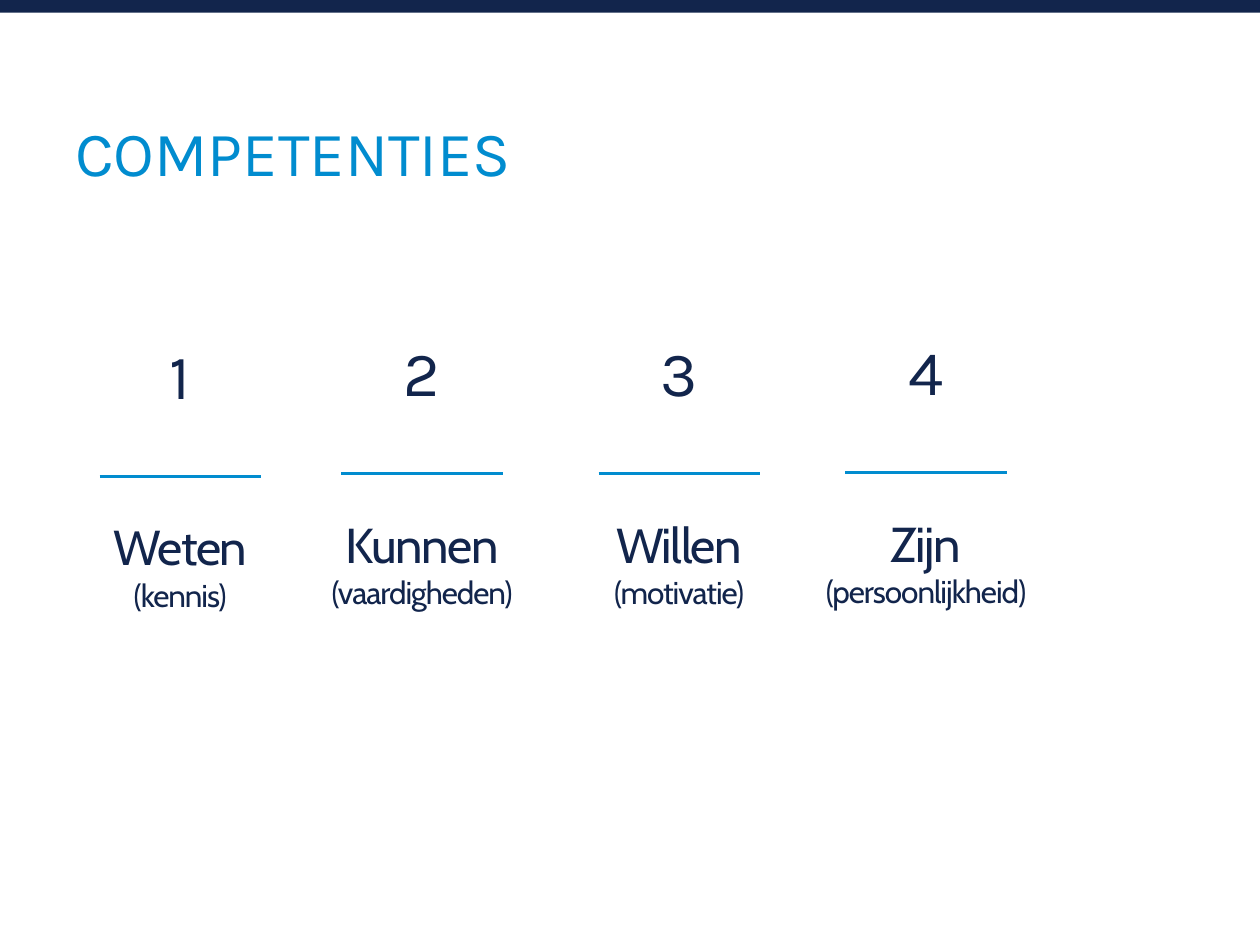
import pptx
import pptx.util
import pptx.dml.color
import pptx.enum.shapes
import pptx.enum.text
import pptx.oxml.ns
from lxml import etree

Inches, Pt = pptx.util.Inches, pptx.util.Pt
RGBColor = pptx.dml.color.RGBColor
Anchor = pptx.enum.text.MSO_ANCHOR
Align = pptx.enum.text.PP_ALIGN
AutoSize = pptx.enum.text.MSO_AUTO_SIZE

NAVY = RGBColor(0x12, 0x25, 0x4C)
BLUE = RGBColor(0x01, 0x8C, 0xCF)

TITLE = {"name": "Karla", "size": Pt(36)}
NUMBER = {"name": "Karla", "size": Pt(36)}
WORD = {"name": "Cabin", "size": Pt(28)}
DETAIL = {"name": "Cabin", "size": Pt(18)}


class Deck:
    def __init__(self, width, height):
        self.prs = pptx.Presentation()
        self.prs.slide_width = Inches(width)
        self.prs.slide_height = Inches(height)
        self.s = self.prs.slides.add_slide(self.prs.slide_layouts[6])

    def bar(self, x, y, w, h, color):
        sp = self.s.shapes.add_shape(
            pptx.enum.shapes.MSO_SHAPE.RECTANGLE,
            Inches(x), Inches(y), Inches(w), Inches(h))
        sp.shadow.inherit = False
        sp.fill.solid()
        sp.fill.fore_color.rgb = color
        sp.line.fill.background()

    def text(self, x, y, w, h, lines, color, frame, paragraph):
        """Each line is (text, font values, letter spacing in points)."""
        sp = self.s.shapes.add_textbox(Inches(x), Inches(y), Inches(w), Inches(h))
        tf = sp.text_frame
        for key, value in {"word_wrap": True, **frame}.items():
            setattr(tf, key, value)
        for i, (text, font, spacing) in enumerate(lines):
            p = tf.add_paragraph() if i else tf.paragraphs[0]
            for key, value in paragraph.items():
                setattr(p, key, value)
            r = p.add_run()
            r.text = text
            for key, value in font.items():
                setattr(r.font, key, value)
            r.font.color.rgb = color
            if spacing:
                r._r.get_or_add_rPr().set("spc", str(round(spacing * 100)))

    def rule(self, x, y, w, color, weight):
        c = self.s.shapes.add_connector(
            pptx.enum.shapes.MSO_CONNECTOR.STRAIGHT,
            Inches(x), Inches(y), Inches(x + w), Inches(y))
        c.line.color.rgb = color
        c.line.width = Pt(weight)
        etree.SubElement(c._element.spPr, pptx.oxml.ns.qn("a:effectLst"))


def main():
    deck = Deck(10, 7.5)

    # Top band and title
    deck.bar(0, 0, 10, 0.1, NAVY)
    deck.text(0.5, 0.17, 9, 1.38, [("COMPETENTIES", TITLE, 0)], BLUE,
              {"vertical_anchor": Anchor.BOTTOM}, {"alignment": Align.LEFT})

    # Competence columns: centre, top, label width, word, detail
    columns = [
        (1.43, 2.47, 1.73, "Weten", "(kennis)"),
        (3.35, 2.45, 1.73, "Kunnen", "(vaardigheden)"),
        (5.39, 2.45, 1.73, "Willen", "(motivatie)"),
        (7.35, 2.44, 2.07, "Zijn", "(persoonlijkheid)"),
    ]
    number_w, rule_w = 1.73, 1.28
    frame = {"vertical_anchor": Anchor.MIDDLE,
             "auto_size": AutoSize.SHAPE_TO_FIT_TEXT}
    for side in ("left", "top", "right", "bottom"):
        frame["margin_" + side] = Inches(0.06)
    centred = {"alignment": Align.CENTER}

    for n, (cx, top, label_w, word, detail) in enumerate(columns, 1):
        deck.text(cx - label_w / 2, top + 1.57, label_w, 0.89,
                  [(word, WORD, -0.8), (detail, DETAIL, -0.6)],
                  NAVY, frame, centred)
        deck.rule(cx - rule_w / 2, top + 1.31, rule_w, BLUE, 1.5)
        deck.text(cx - number_w / 2, top, number_w, 0.82,
                  [(str(n), NUMBER, -1.2)], NAVY, frame,
                  {**centred, "line_spacing": 1.3})

    deck.prs.save("out.pptx")


if __name__ == "__main__":
    main()
